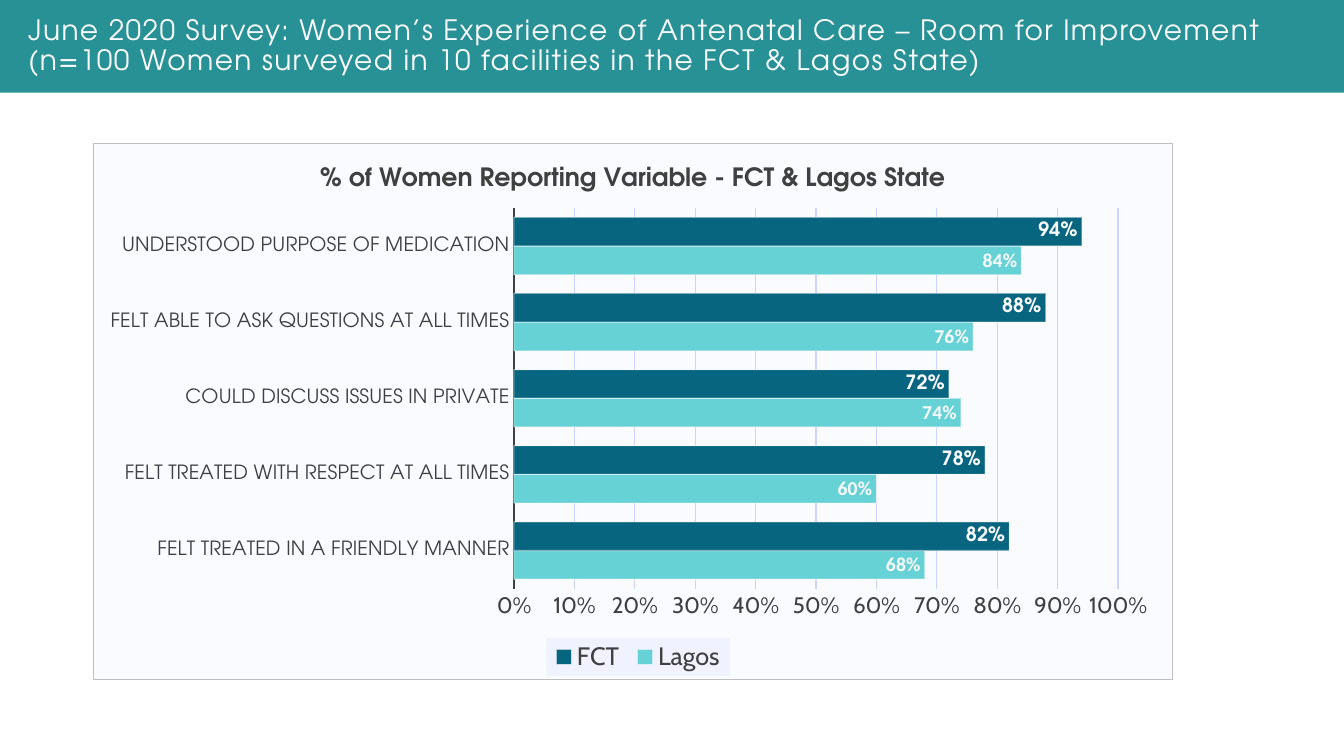
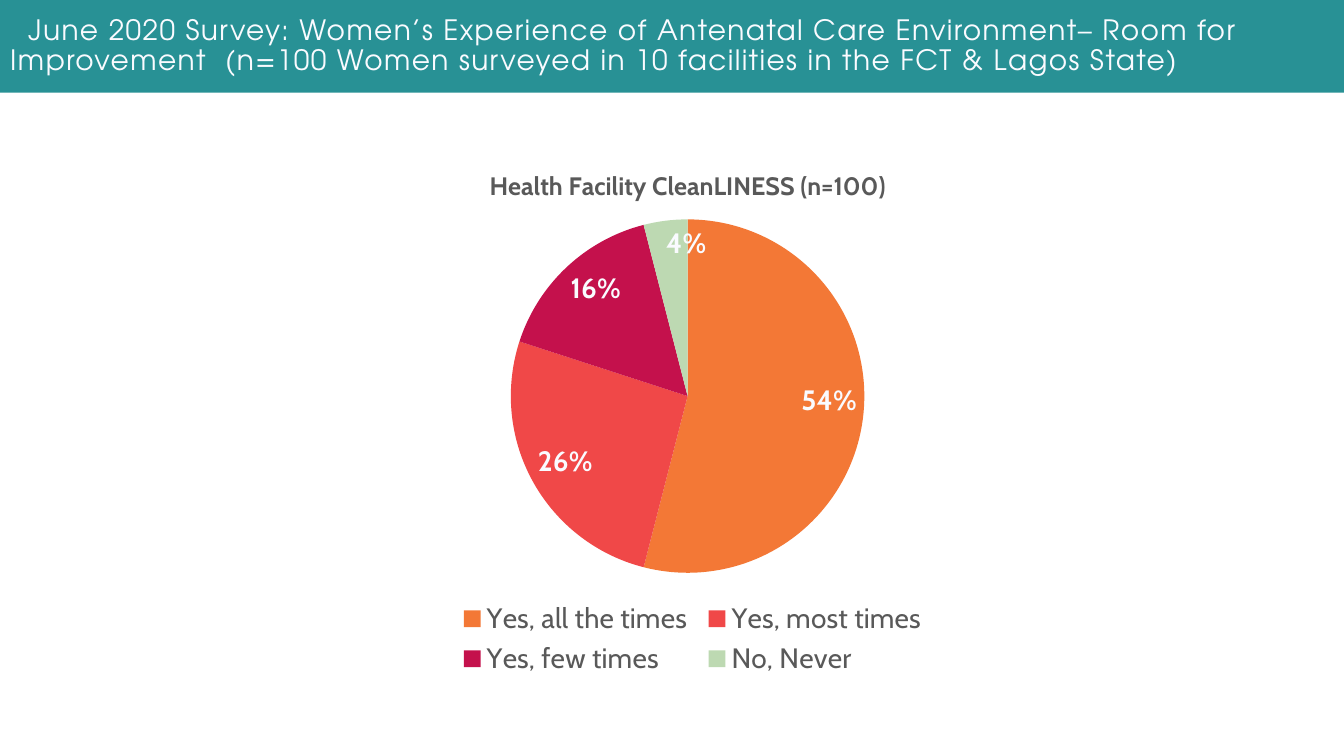
import pptx
import pptx.chart.data
import pptx.dml.color
import pptx.enum.chart
import pptx.enum.text
import pptx.oxml
import pptx.oxml.ns
import pptx.util
from pptx.util import Inches, Pt

TEAL, DARK_TEAL, AQUA = "289195", "086580", "67D2D6"
PALE, DARK_GREY, MID_GREY = "FAFBFF", "404040", "595959"
HEADING_FONT, BODY_FONT = "TeX Gyre Adventor", "Cabin"
qn = pptx.oxml.ns.qn
NAMESPACES = pptx.oxml.ns.nsdecls("c", "a")


def style_font(font, name, size, color, bold=False):
    font.name, font.size, font.bold = name, Pt(size), bold
    font.color.rgb = pptx.dml.color.RGBColor.from_string(color)


def set_layout(element, position, target, x, y, width, height):
    for old_layout in element.findall(qn("c:layout")):
        element.remove(old_layout)
    element.insert(position, pptx.oxml.parse_xml(
        f'<c:layout {NAMESPACES}><c:manualLayout>{target}'
        '<c:xMode val="edge"/><c:yMode val="edge"/>'
        f'<c:x val="{x}"/><c:y val="{y}"/><c:w val="{width}"/><c:h val="{height}"/>'
        '</c:manualLayout></c:layout>'))


presentation = pptx.Presentation()
presentation.slide_width, presentation.slide_height = Inches(13.33), Inches(7.5)

# Chart data
experience_data = pptx.chart.data.CategoryChartData(number_format="0%")
experience_data.categories = [
    "FELT TREATED IN A FRIENDLY MANNER",
    "FELT TREATED WITH RESPECT AT ALL TIMES",
    "COULD DISCUSS ISSUES IN PRIVATE",
    "FELT ABLE TO ASK QUESTIONS AT ALL TIMES",
    "UNDERSTOOD PURPOSE OF MEDICATION",
]
experience_data.add_series("Lagos", [0.68, 0.60, 0.74, 0.76, 0.84])
experience_data.add_series("FCT", [0.82, 0.78, 0.72, 0.88, 0.94])

cleanliness_data = pptx.chart.data.CategoryChartData()
cleanliness_data.categories = [
    "Yes, all the times", "Yes, most times", "Yes, few times", "No, Never"]
cleanliness_data.add_series("Series 1", [54, 26, 16, 4])

# What differs between the two slides
chart_types = pptx.enum.chart.XL_CHART_TYPE
slide_contents = [
    {
        "title": "June 2020 Survey: Women’s Experience of Antenatal Care – Room for Improvement"
                 "\v(n=100 Women surveyed in 10 facilities in the FCT & Lagos State)",
        "margin": 0.18, "indent": 0,
        "type": chart_types.BAR_CLUSTERED, "data": experience_data,
        "box": (0.92, 1.42, 10.71, 5.33),
        "chart_title": "% of Women Reporting Variable - FCT & Lagos State",
        "title_font": HEADING_FONT, "color": DARK_GREY, "legend_size": 18,
        "plot_layout": (0.39, 0.12, 0.56, 0.71),
        "legend_layout": (0.42, 0.93, 0.17, 0.07),
    },
    {
        "title": "June 2020 Survey: Women’s Experience of Antenatal Care Environment– Room for "
                 "Improvement  (n=100 Women surveyed in 10 facilities in the FCT & Lagos State)",
        "margin": 0, "indent": 0.18,
        "type": chart_types.PIE, "data": cleanliness_data,
        "box": (1.95, 1.47, 9.74, 5.29),
        "chart_title": "Health Facility CleanLINESS (n=100)",
        "title_font": BODY_FONT, "color": MID_GREY, "legend_size": 20,
        "plot_layout": (0.32, 0.13, 0.36, 0.67),
        "legend_layout": (0.26, 0.84, 0.49, 0.16),
    },
]

charts = []
for content in slide_contents:
    slide = presentation.slides.add_slide(presentation.slide_layouts[5])

    # Title band
    title = slide.shapes.title
    title.left, title.top = Inches(0), Inches(0)
    title.width, title.height = Inches(13.33), Inches(0.92)
    title.fill.solid()
    title.fill.fore_color.rgb = pptx.dml.color.RGBColor.from_string(TEAL)
    title.text_frame.text = content["title"]
    title.text_frame.word_wrap = True
    title.text_frame.auto_size = pptx.enum.text.MSO_AUTO_SIZE.NONE
    title.text_frame.vertical_anchor = pptx.enum.text.MSO_ANCHOR.MIDDLE
    paragraph = title.text_frame.paragraphs[0]
    paragraph.alignment = pptx.enum.text.PP_ALIGN.LEFT
    paragraph.line_spacing = 0.9
    paragraph_properties = paragraph._p.get_or_add_pPr()
    paragraph_properties.set("marL", str(Inches(content["margin"])))
    paragraph_properties.set("indent", str(Inches(content["indent"])))
    style_font(paragraph.font, HEADING_FONT, 20, PALE)
    for run in paragraph.runs:
        run._r.get_or_add_rPr().set("spc", "100")

    # Chart with its title and legend
    box = [Inches(length) for length in content["box"]]
    chart = slide.shapes.add_chart(content["type"], *box, content["data"]).chart
    style_font(chart.font, BODY_FONT, 10, "000000")
    chart.has_title = True
    chart.chart_title.include_in_layout = False
    chart.chart_title.text_frame.text = content["chart_title"]
    style_font(chart.chart_title.text_frame.paragraphs[0].font,
               content["title_font"], 18, content["color"], bold=True)
    chart.has_legend = True
    chart.legend.position = pptx.enum.chart.XL_LEGEND_POSITION.BOTTOM
    chart.legend.include_in_layout = False
    style_font(chart.legend.font, BODY_FONT, content["legend_size"], content["color"])
    set_layout(chart._chartSpace.chart.plotArea, 0, '<c:layoutTarget val="inner"/>',
               *content["plot_layout"])
    set_layout(chart.legend._element, 1, "", *content["legend_layout"])
    charts.append(chart)

bar_chart, pie_chart = charts

# Bar chart: background, border and legend fill
bar_chart._chartSpace.chart.addnext(pptx.oxml.parse_xml(
    f'<c:spPr {NAMESPACES}><a:solidFill><a:srgbClr val="{PALE}"/></a:solidFill>'
    f'<a:ln w="{Pt(0.75)}"><a:solidFill><a:srgbClr val="BFBFBF"/></a:solidFill></a:ln></c:spPr>'))
bar_chart.legend._element.find(qn("c:overlay")).addnext(pptx.oxml.parse_xml(
    f'<c:spPr {NAMESPACES}><a:solidFill><a:srgbClr val="F0F2FF"/></a:solidFill></c:spPr>'))

# Bar chart: axes
category_axis, value_axis = bar_chart.category_axis, bar_chart.value_axis
for axis, font_name, size in [(category_axis, HEADING_FONT, 14), (value_axis, BODY_FONT, 16)]:
    axis.major_tick_mark = axis.minor_tick_mark = pptx.enum.chart.XL_TICK_MARK.NONE
    style_font(axis.tick_labels.font, font_name, size, DARK_GREY)
category_axis.format.line.width = Pt(1.5)
category_axis.format.line.color.rgb = pptx.dml.color.RGBColor.from_string(DARK_GREY)
value_axis.format.line.fill.background()
value_axis.minimum_scale, value_axis.maximum_scale, value_axis.major_unit = 0, 1, 0.1
value_axis.tick_labels.number_format = "0%"
value_axis.tick_labels.number_format_is_linked = False
value_axis.has_major_gridlines = True
gridline = value_axis.major_gridlines.format.line
gridline.width = Pt(0.75)
gridline.color.rgb = pptx.dml.color.RGBColor.from_string("CDD3FF")

# Bar chart: series
bar_plot, pie_plot = bar_chart.plots[0], pie_chart.plots[0]
bar_plot.gap_width, bar_plot.overlap = 65, 0
bar_plot.vary_by_categories = False
for series, color in zip(bar_plot.series, [AQUA, DARK_TEAL]):
    series.format.fill.solid()
    series.format.fill.fore_color.rgb = pptx.dml.color.RGBColor.from_string(color)
    series.format.line.width = Pt(0.75)
    series.format.line.color.rgb = pptx.dml.color.RGBColor.from_string(PALE)
    line_color = series._element.find(".//" + qn("a:ln")).find(".//" + qn("a:srgbClr"))
    line_color.append(pptx.oxml.parse_xml(f'<a:alpha {NAMESPACES} val="50000"/>'))

# Pie chart: slices
pie_plot.vary_by_categories = True
for index, color in enumerate(["F37836", "F04848", "C4114C", "BDD9B2"]):
    slice_fill = pie_plot.series[0].points[index].format.fill
    slice_fill.solid()
    slice_fill.fore_color.rgb = pptx.dml.color.RGBColor.from_string(color)

# Data labels of both charts
for series, font_name, size, is_percentage in [
    (bar_plot.series[0], "Calibri", 14, False),
    (bar_plot.series[1], HEADING_FONT, 14, False),
    (pie_plot.series[0], BODY_FONT, 20, True),
]:
    labels = series.data_labels
    labels.show_value, labels.show_percentage = not is_percentage, is_percentage
    labels.number_format, labels.number_format_is_linked = "0%", False
    labels.position = pptx.enum.chart.XL_LABEL_POSITION.INSIDE_END
    style_font(labels.font, font_name, size, PALE, bold=True)

presentation.save("out.pptx")
